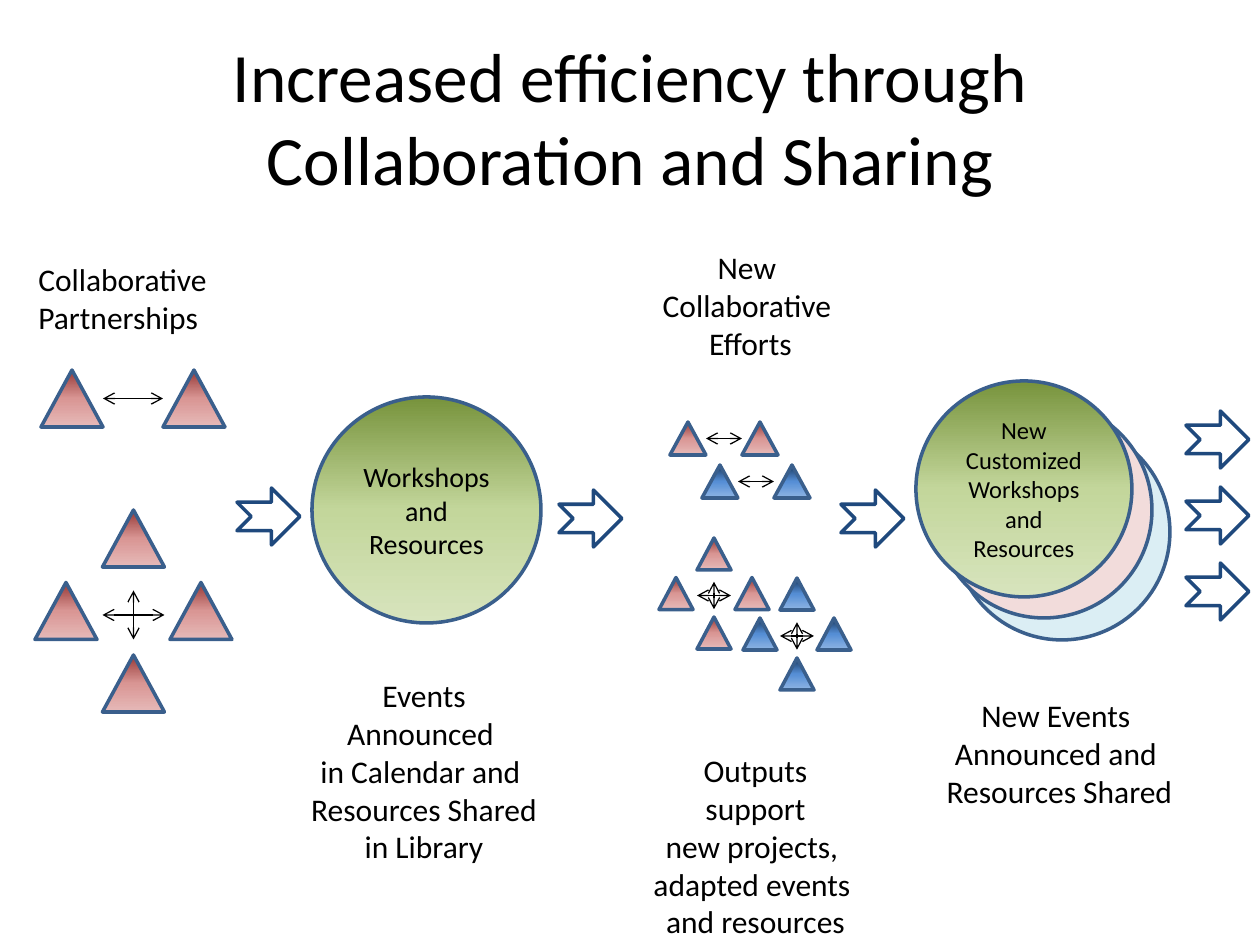
from lxml import etree
from pptx import Presentation
from pptx.dml.color import RGBColor
from pptx.enum.shapes import MSO_CONNECTOR, MSO_SHAPE
from pptx.enum.text import MSO_ANCHOR, PP_ALIGN
from pptx.oxml.ns import qn
from pptx.util import Emu, Pt

PX = 914400 / 126
FONT = "Calibri"
TRIANGLE, ELLIPSE = MSO_SHAPE.ISOSCELES_TRIANGLE, MSO_SHAPE.OVAL
NOTCHED_ARROW = MSO_SHAPE.NOTCHED_RIGHT_ARROW
STRAIGHT = MSO_CONNECTOR.STRAIGHT
LEFT, CENTER = PP_ALIGN.LEFT, PP_ALIGN.CENTER
TOP, MIDDLE = MSO_ANCHOR.TOP, MSO_ANCHOR.MIDDLE

RED = ("953735", "D99694", "E6B9B8")
BLUE = ("17375E", "558ED5", "8EB4E3")
GREEN = ("77933C", "C3D69B", "D7E4BD")
OUTLINE, FLOW, BLACK = "3A5F8C", "1F497D", "000000"
LARGE, SMALL, MINI = (62, 57), (36, 33), (34, 32)


def px(*lengths):
    return [Emu(round(length * PX)) for length in lengths]


def color(hex_code):
    return RGBColor.from_string(hex_code)


def fill_gradient(shape, colors):
    """Fill from top to bottom with evenly spaced colours."""
    shape.fill.gradient()
    shape.fill.gradient_angle = 270
    stops = shape._element.spPr.find(".//" + qn("a:gsLst"))
    for stop in list(stops):
        stops.remove(stop)
    for i, hex_code in enumerate(colors):
        position = 100000 * i // (len(colors) - 1)
        stop = etree.SubElement(stops, qn("a:gs"), pos=str(position))
        etree.SubElement(stop, qn("a:srgbClr"), val=hex_code)


def write(frame, text, size=18, align=CENTER, anchor=TOP):
    frame.word_wrap = True
    frame.vertical_anchor = anchor
    paragraphs = text.split("\n")
    for i, line in enumerate(paragraphs):
        paragraph = frame.add_paragraph() if i else frame.paragraphs[0]
        paragraph.text = line
        paragraph.alignment = align
        for run in paragraph.runs:
            run.font.name = FONT
            run.font.size = Pt(size)
            run.font.color.rgb = color(BLACK)


def add_label(slide, box, text, **style):
    write(slide.shapes.add_textbox(*px(*box)).text_frame, text, **style)


def add_figure(slide, kind, box, fill=None, line=OUTLINE):
    """Add an outlined shape; fill is a hex colour, a tuple of them or None."""
    figure = slide.shapes.add_shape(kind, *px(*box))
    figure.shadow.inherit = False
    if fill is None:
        figure.fill.background()
    elif isinstance(fill, tuple):
        fill_gradient(figure, fill)
    else:
        figure.fill.solid()
        figure.fill.fore_color.rgb = color(fill)
    figure.line.color.rgb = color(line)
    figure.line.width = Pt(2)
    return figure


def add_exchange(slide, x1, y1, x2, y2):
    """Add a thin arrow with a head at both ends."""
    arrow = slide.shapes.add_connector(STRAIGHT, *px(x1, y1, x2, y2))
    arrow.line.color.rgb = color(BLACK)
    arrow.line.width = Pt(0.75)
    line = arrow.line._get_or_add_ln()
    for end in ("a:headEnd", "a:tailEnd"):
        etree.SubElement(line, qn(end), type="arrow")
    etree.SubElement(arrow._element.spPr, qn("a:effectLst"))


def add_pair(slide, box, partner, colors):
    """Two partners at the ends of the box, exchanging."""
    x, y, w, h = box
    pw, ph = partner
    for left in (x, x + w - pw):
        add_figure(slide, TRIANGLE, (left, y, pw, ph), colors)
    add_exchange(slide, x + pw, y + h / 2, x + w - pw, y + h / 2)


def add_quartet(slide, box, partner, colors):
    """Four partners at the sides of the box, exchanging across its middle."""
    x, y, w, h = box
    pw, ph = partner
    mid_x, mid_y = x + (w - pw) / 2, y + (h - ph) / 2
    for left, top in ((x, mid_y), (mid_x, y), (mid_x, y + h - ph),
                      (x + w - pw, mid_y)):
        add_figure(slide, TRIANGLE, (left, top, pw, ph), colors)
    center_x, center_y = x + w / 2, y + h / 2 + ph // 14
    reach_x, reach_y = pw / 2, ph * 0.43
    add_exchange(slide, center_x, center_y - reach_y, center_x, center_y + reach_y)
    add_exchange(slide, center_x - reach_x, center_y, center_x + reach_x, center_y)


def add_flow_arrow(slide, x, y):
    add_figure(slide, NOTCHED_ARROW, (x, y, 63, 57), line=FLOW)


def add_partnerships(slide, x, y):
    add_label(slide, (x, y, 203, 89), "Collaborative \vPartnerships", align=LEFT)
    add_pair(slide, (x + 15, y + 116, 184, 57), LARGE, RED)
    add_quartet(slide, (x + 9, y + 256, 197, 202), LARGE, RED)


def add_workshops(slide, x, y):
    circle = add_figure(slide, ELLIPSE, (x + 16, y, 229, 226), GREEN)
    write(circle.text_frame, "Workshops and Resources", size=16, anchor=MIDDLE)
    add_label(slide, (x, y + 273, 256, 165),
              "Events Announced \vin Calendar and \vResources Shared \nin Library")


def add_new_efforts(slide, x, y):
    add_label(slide, (x + 10, y, 203, 127), "New \vCollaborative \vEfforts")
    add_pair(slide, (x + 31, y + 180, 108, 33), SMALL, RED)
    add_pair(slide, (x + 63, y + 223, 108, 33), SMALL, BLUE)
    add_quartet(slide, (x + 20, y + 296, 110, 111), MINI, RED)
    add_quartet(slide, (x + 104, y + 336, 108, 112), MINI, BLUE)
    add_label(slide, (x, y + 503, 233, 165),
              "Outputs support\vnew projects, \vadapted events \vand resources")


def add_new_workshops(slide, x, y):
    for dx, dy, fill in ((38, 43, "DBEEF4"), (20, 21, "F2DCDB"), (0, 0, GREEN)):
        circle = add_figure(slide, ELLIPSE, (x + dx, y + dy, 216, 216), fill)
    write(circle.text_frame, "New Customized\vWorkshops and Resources",
          size=14, anchor=MIDDLE)
    add_label(slide, (x + 16, y + 309, 255, 127),
              "New Events \vAnnounced and \vResources Shared ")
    for i in range(3):
        add_flow_arrow(slide, x + 270, y + 30 + 76 * i)


def main():
    deck = Presentation()
    deck.slide_width, deck.slide_height = px(1260, 945)
    slide = deck.slides.add_slide(deck.slide_layouts[6])
    add_label(slide, (63, 38, 1134, 157),
              "Increased efficiency through Collaboration and Sharing",
              size=39.6, anchor=MIDDLE)
    add_partnerships(slide, 26, 254)
    add_flow_arrow(slide, 237, 488)
    add_workshops(slide, 296, 397)
    add_flow_arrow(slide, 559, 490)
    add_new_efforts(slide, 639, 242)
    add_flow_arrow(slide, 841, 490)
    add_new_workshops(slide, 916, 381)
    deck.save("out.pptx")


if __name__ == "__main__":
    main()
